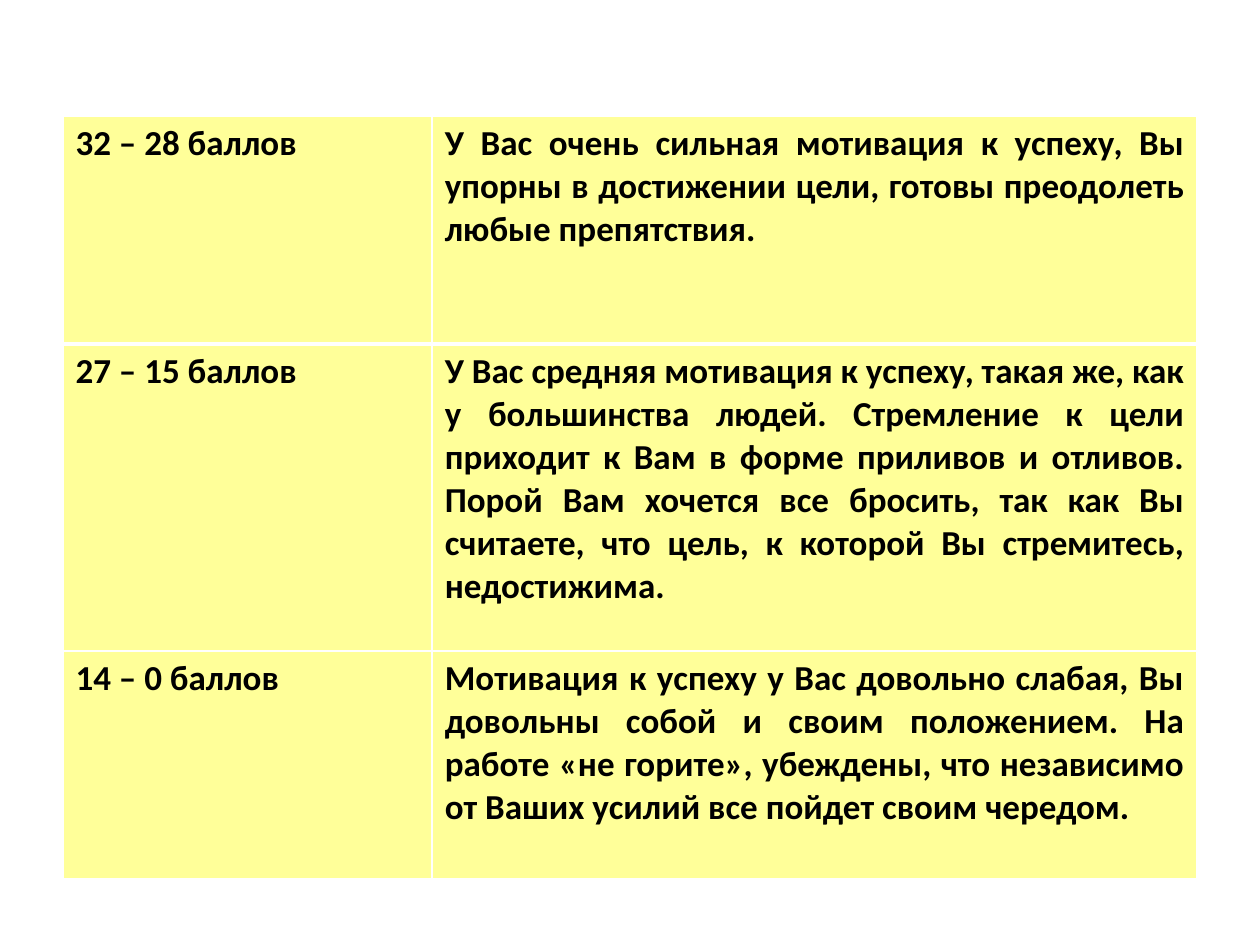
import pptx
import pptx.dml.color
import pptx.enum.text
import pptx.oxml
import pptx.oxml.ns
import pptx.util

Pt = pptx.util.Pt
RGBColor = pptx.dml.color.RGBColor

BLACK = RGBColor(0x00, 0x00, 0x00)
WHITE = RGBColor(0xFF, 0xFF, 0xFF)
YELLOW = RGBColor(0xFF, 0xFF, 0x99)

FONT = {"name": "Calibri", "size": Pt(20), "bold": True}
COLUMN_WIDTHS = (211, 437)
ROW_HEIGHTS = (130.4, 175.4, 130.4)
SCORES = (
    ("32 – 28 баллов",
     "У Вас очень сильная мотивация к успеху, Вы упорны в достижении цели, "
     "готовы преодолеть любые препятствия."),
    ("27 – 15 баллов",
     "У Вас средняя мотивация к успеху, такая же, как у большинства людей. "
     "Стремление к цели приходит к Вам в форме приливов и отливов. "
     "Порой Вам хочется все бросить, так как Вы считаете, что цель, "
     "к которой Вы стремитесь, недостижима."),
    ("14 – 0 баллов",
     "Мотивация к успеху у Вас довольно слабая, Вы довольны собой и своим "
     "положением. На работе «не горите», убеждены, что независимо от Ваших "
     "усилий все пойдет своим чередом."),
)


def set_borders(cell, widths):
    """Draw white cell borders with the given widths in points."""
    tc_pr = cell._tc.get_or_add_tcPr()
    for i, (side, width) in enumerate(widths.items()):
        tc_pr.insert(i, pptx.oxml.parse_xml(
            f'<a:ln{side} {pptx.oxml.ns.nsdecls("a")} w="{Pt(width)}">'
            f'<a:solidFill><a:srgbClr val="{WHITE}"/></a:solidFill>'
            f'</a:ln{side}>'))


def fill_cell(cell, text, widths):
    """Write justified bold text into a yellow cell."""
    cell.fill.solid()
    cell.fill.fore_color.rgb = YELLOW
    set_borders(cell, widths)
    p = cell.text_frame.paragraphs[0]
    p.alignment = pptx.enum.text.PP_ALIGN.JUSTIFY
    r = p.add_run()
    r.text = text
    for name, value in FONT.items():
        setattr(r.font, name, value)
    r.font.color.rgb = BLACK


def add_score_table(s):
    """Add the table of score ranges and their meanings."""
    table = s.shapes.add_table(
        len(SCORES), len(COLUMN_WIDTHS), Pt(36), Pt(66.2),
        Pt(sum(COLUMN_WIDTHS)), Pt(sum(ROW_HEIGHTS))).table
    for column, width in zip(table.columns, COLUMN_WIDTHS):
        column.width = Pt(width)
    for i, (row, height, texts) in enumerate(zip(table.rows, ROW_HEIGHTS, SCORES)):
        row.height = Pt(height)
        widths = {"L": 1, "R": 1, "T": 3 if i == 1 else 1, "B": 3 if i == 0 else 1}
        for cell, text in zip(row.cells, texts):
            fill_cell(cell, text, widths)


def main():
    """Build and save the slide."""
    prs = pptx.Presentation()
    prs.slide_width, prs.slide_height = Pt(720), Pt(540)
    s = prs.slides.add_slide(prs.slide_layouts[6])
    add_score_table(s)
    prs.save("out.pptx")


if __name__ == "__main__":
    main()
